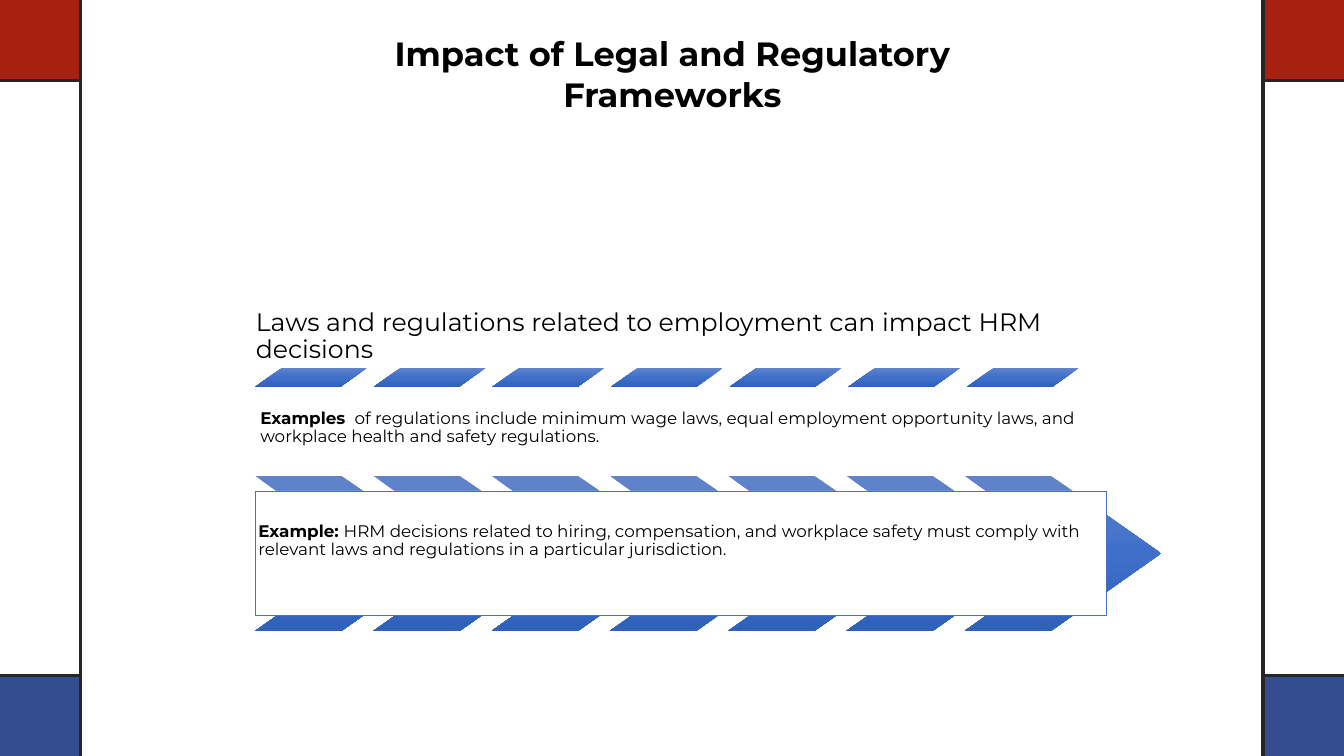
from copy import deepcopy
from dataclasses import dataclass

from pptx import Presentation
from pptx.dml.color import RGBColor
from pptx.enum.shapes import MSO_CONNECTOR as Connector, MSO_SHAPE as Preset
from pptx.enum.text import MSO_ANCHOR as Anchor, MSO_AUTO_SIZE as AutoSize, PP_ALIGN as Align
from pptx.oxml.ns import qn
from pptx.oxml.xmlchemy import OxmlElement
from pptx.shapes.base import BaseShape
from pptx.slide import Slide
from pptx.util import Cm, Pt

BLACK = RGBColor(0x00, 0x00, 0x00)
WHITE = RGBColor(0xFF, 0xFF, 0xFF)
CHARCOAL = RGBColor(0x26, 0x26, 0x26)
RED = RGBColor(0xA8, 0x21, 0x10)
NAVY = RGBColor(0x34, 0x4D, 0x8F)
BLUE = RGBColor(0x44, 0x72, 0xC4)
GRADIENT = (
    (0, RGBColor(0x61, 0x83, 0xCB)),
    (0.5, RGBColor(0x3E, 0x70, 0xCA)),
    (1, RGBColor(0x30, 0x62, 0xBB)),
)
FONT = "Montserrat"
WIDTH, HEIGHT = 33.87, 19.05
CORNER = 2.03
LEFT = 6.43
MARKS_PER_ROW = 7


@dataclass(frozen=True)
class Frame:
    left: float
    top: float
    width: float
    height: float

    def lengths(self) -> tuple[Cm, Cm, Cm, Cm]:
        return Cm(self.left), Cm(self.top), Cm(self.width), Cm(self.height)


@dataclass(frozen=True)
class MarkRow:
    preset: Preset
    first: Frame
    pitch: float
    slant: float


@dataclass(frozen=True)
class Passage:
    frame: Frame
    lead: str
    body: str
    size: float
    anchor: Anchor
    inset: float
    inset_bottom: float
    framed: bool = False


MARK_ROWS = (
    MarkRow(Preset.PARALLELOGRAM, Frame(LEFT, 9.27, 2.82, 0.48), 2.99, 1.41),
    MarkRow(Preset.CHEVRON, Frame(LEFT, 11.99, 4.95, 3.91), 2.98, 0.71),
)
PASSAGES = (
    Passage(Frame(6.27, 5.26, 21.18, 4.09), "",
            "Laws and regulations related to employment can impact HRM decisions",
            18, Anchor.BOTTOM, 0.18, 0.18),
    Passage(Frame(LEFT, 10.06, 21.18, 1.93), "Examples ",
            " of regulations include minimum wage laws, equal employment opportunity laws, "
            "and workplace health and safety regulations.",
            12, Anchor.BOTTOM, 0.13, 0.74),
    Passage(Frame(LEFT, 12.37, 21.46, 3.15), "Example: ",
            "HRM decisions related to hiring, compensation, and workplace safety must comply "
            "with relevant laws and regulations in a particular jurisdiction.",
            12, Anchor.MIDDLE, 0.08, 0.69, True),
)


def set_all(target: object, values: dict) -> None:
    for name, value in values.items():
        setattr(target, name, value)


def write(para, text: str, size: float, bold: bool) -> None:
    span = para.add_run()
    span.text = text
    set_all(span.font, {"name": FONT, "size": Pt(size), "bold": bold})
    span.font.color.rgb = BLACK


def add_preset(page: Slide, preset: Preset, frame: Frame) -> BaseShape:
    shape = page.shapes.add_shape(preset, *frame.lengths())
    shape.shadow.inherit = False
    shape.line.fill.background()
    return shape


def add_rule(page: Slide, x1: float, y1: float, x2: float, y2: float) -> None:
    rule = page.shapes.add_connector(Connector.STRAIGHT, Cm(x1), Cm(y1), Cm(x2), Cm(y2))
    rule.line.color.rgb = CHARCOAL
    rule.line.width = Pt(2.75)
    rule._element.spPr.append(OxmlElement("a:effectLst"))


def add_border(page: Slide, outer: float, inner: float) -> None:
    for top, color in ((HEIGHT - CORNER, NAVY), (0, RED)):
        corner = add_preset(page, Preset.RECTANGLE, Frame(min(outer, inner), top, CORNER, CORNER))
        corner.fill.solid()
        corner.fill.fore_color.rgb = color
    for y in (CORNER, HEIGHT - CORNER):
        add_rule(page, outer, y, inner, y)
    add_rule(page, inner, 0, inner, HEIGHT)


def add_title(page: Slide) -> None:
    title = page.shapes.title
    left, top, width, height = Frame(8.46, 0.71, 16.97, 2.31).lengths()
    set_all(title, {"left": left, "top": top, "width": width, "height": height})
    set_all(title.text_frame, {"word_wrap": True, "auto_size": AutoSize.NONE,
                               "vertical_anchor": Anchor.TOP})
    para = title.text_frame.paragraphs[0]
    set_all(para, {"alignment": Align.CENTER, "line_spacing": 1.0})
    write(para, "Impact of Legal and Regulatory Frameworks", 24, True)


def add_mark_row(page: Slide, row: MarkRow) -> None:
    for index in range(MARKS_PER_ROW):
        first = row.first
        frame = Frame(first.left + index * row.pitch, first.top, first.width, first.height)
        mark = add_preset(page, row.preset, frame)
        mark.adjustments[0] = row.slant
        mark.fill.gradient()
        mark.fill.gradient_angle = 270
        stops = next(mark._element.spPr.iter(qn("a:gsLst")))
        stops.append(deepcopy(stops[0]))
        for stop, (position, color) in zip(mark.fill.gradient_stops, GRADIENT):
            stop.position = position
            stop.color.rgb = color


def add_passage(page: Slide, passage: Passage) -> None:
    if passage.framed:
        box = add_preset(page, Preset.RECTANGLE, passage.frame)
        box.fill.solid()
        box.fill.fore_color.rgb = WHITE
        box.line.color.rgb = BLUE
        box.line.width = Pt(0.5)
    else:
        box = page.shapes.add_textbox(*passage.frame.lengths())
    inset = Cm(passage.inset)
    set_all(box.text_frame, {
        "word_wrap": True, "vertical_anchor": passage.anchor,
        "margin_left": inset, "margin_right": inset,
        "margin_top": inset, "margin_bottom": Cm(passage.inset_bottom),
    })
    para = box.text_frame.paragraphs[0]
    set_all(para, {"alignment": Align.LEFT, "line_spacing": 0.9})
    if passage.lead:
        write(para, passage.lead, passage.size, True)
    write(para, passage.body, passage.size, False)


def main() -> None:
    deck = Presentation()
    set_all(deck, {"slide_width": Cm(WIDTH), "slide_height": Cm(HEIGHT)})
    page = deck.slides.add_slide(deck.slide_layouts.get_by_name("Title Only"))
    add_border(page, WIDTH, WIDTH - CORNER)
    add_border(page, 0, CORNER)
    add_title(page)
    for row in MARK_ROWS:
        add_mark_row(page, row)
    for passage in PASSAGES:
        add_passage(page, passage)
    deck.save("out.pptx")


if __name__ == "__main__":
    main()
